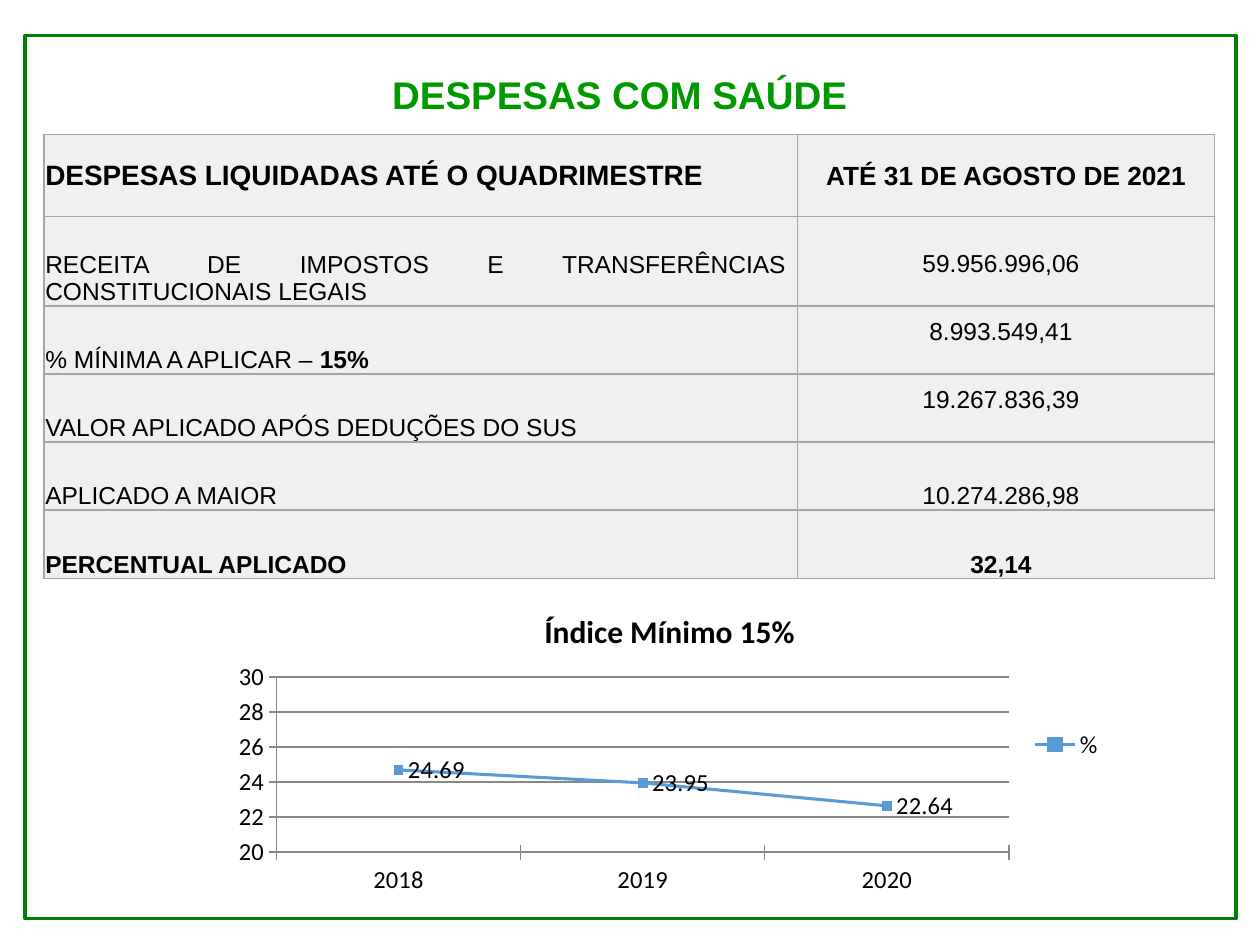
from lxml import etree
from pptx import Presentation
from pptx.chart.data import CategoryChartData
from pptx.dml.color import RGBColor
from pptx.enum.chart import (XL_CHART_TYPE, XL_LABEL_POSITION, XL_LEGEND_POSITION,
                             XL_MARKER_STYLE, XL_TICK_MARK)
from pptx.enum.shapes import MSO_SHAPE
from pptx.enum.text import MSO_ANCHOR, MSO_AUTO_SIZE, PP_ALIGN
from pptx.oxml import parse_xml
from pptx.oxml.ns import nsdecls, qn
from pptx.util import Pt

LEFT, CENTER, JUSTIFY = PP_ALIGN.LEFT, PP_ALIGN.CENTER, PP_ALIGN.JUSTIFY
MIDDLE, BOTTOM = MSO_ANCHOR.MIDDLE, MSO_ANCHOR.BOTTOM
CROSS = XL_TICK_MARK.CROSS

TITLE = "DESPESAS COM SAÚDE"
HEADER = [("DESPESAS LIQUIDADAS ATÉ O QUADRIMESTRE", 16, LEFT),
          ("ATÉ 31 DE AGOSTO DE 2021", 15, CENTER)]
# label runs as (text, bold), value, value bold, value raised by one line
ROWS = [
    ([("RECEITA DE IMPOSTOS E TRANSFERÊNCIAS CONSTITUCIONAIS LEGAIS", False)],
     "59.956.996,06", False, True),
    ([("% MÍNIMA A APLICAR – ", False), ("15%", True)], "8.993.549,41", False, True),
    ([("VALOR APLICADO APÓS DEDUÇÕES DO SUS", False)], "19.267.836,39", False, True),
    ([("APLICADO A MAIOR", False)], "10.274.286,98", False, False),
    ([("PERCENTUAL APLICADO", True)], "32,14", True, False),
]
CHART_TITLE = "Índice Mínimo 15%"
SERIES_NAME = "%"
INDEX_BY_YEAR = {"2018": 24.69, "2019": 23.95, "2020": 22.64}

THEME = {
    "font": "Arial", "chart_font": "Calibri",
    "text": "000000", "title": "009900", "frame": "008000",
    "cell": "F0F0F0", "border": "A5A5A5", "grid": "878787", "series": "5B9BD5",
    "title_size": 22, "body_size": 14, "chart_title_size": 18,
}
FRAME_BOX = (14.4, 20.2, 692, 504.7)
TITLE_BOX = (65.5, 15.1, 584, 55.5)
TABLE_BOX = (25.2, 77, 668.9, 253.4)
CHART_BOX = (127.4, 337.7, 510.5, 175.7)
COLUMN_WIDTHS = (430.6, 238.3)
ROW_HEIGHTS = (46.8, 51.1) + (38.9,) * 4
PLOT_LAYOUT = {"x": 0.06, "y": 0.28, "w": 0.82, "h": 0.57}
LINE_HEIGHT = 16


def box(values):
    return [Pt(v) for v in values]


def color(name):
    return RGBColor.from_string(THEME[name])


def add_run(p, text, size, bold, tint="text", font="font"):
    r = p.add_run()
    r.text = text
    r.font.size, r.font.bold, r.font.name = Pt(size), bold, THEME[font]
    r.font.color.rgb = color(tint)


def style_line(line, tint, width):
    line.color.rgb = color(tint)
    line.width = Pt(width)


def add_frame(s):
    sp = s.shapes.add_shape(MSO_SHAPE.RECTANGLE, *box(FRAME_BOX))
    sp.shadow.inherit = False
    sp.fill.background()
    style_line(sp.line, "frame", 2)


def set_title(s):
    sp = s.shapes.title
    sp.left, sp.top, sp.width, sp.height = box(TITLE_BOX)
    tf = sp.text_frame
    tf.auto_size, tf.vertical_anchor = MSO_AUTO_SIZE.NONE, BOTTOM
    tf.margin_right = Pt(14)
    p = tf.paragraphs[0]
    p.alignment = CENTER
    add_run(p, TITLE, THEME["title_size"], True, "title")


def add_borders(cell):
    tc_pr = cell._tc.get_or_add_tcPr()
    for i, side in enumerate(("lnL", "lnR", "lnT", "lnB")):
        tc_pr.insert(i, parse_xml(
            f'<a:{side} {nsdecls("a")} w="{Pt(1)}"><a:solidFill>'
            f'<a:srgbClr val="{THEME["border"]}"/></a:solidFill></a:{side}>'))


def fill_cell(cell, runs, size, align, anchor, right=6.5, bottom=0):
    cell.fill.solid()
    cell.fill.fore_color.rgb = color("cell")
    add_borders(cell)
    cell.margin_left = cell.margin_top = Pt(0.7)
    cell.margin_right, cell.margin_bottom = Pt(right), Pt(bottom)
    cell.vertical_anchor = anchor
    p = cell.text_frame.paragraphs[0]
    p.alignment = align
    for text, bold in runs:
        add_run(p, text, size, bold)


def add_expense_table(s):
    table = s.shapes.add_table(len(ROW_HEIGHTS), len(COLUMN_WIDTHS), *box(TABLE_BOX)).table
    for column, width in zip(table.columns, COLUMN_WIDTHS):
        column.width = Pt(width)
    for row, height in zip(table.rows, ROW_HEIGHTS):
        row.height = Pt(height)
    for c, (text, size, align) in enumerate(HEADER):
        fill_cell(table.cell(0, c), [(text, True)], size, align, MIDDLE, right=0.7)
    size = THEME["body_size"]
    for i, (label, value, bold, raised) in enumerate(ROWS, start=1):
        fill_cell(table.cell(i, 0), label, size, JUSTIFY, BOTTOM)
        fill_cell(table.cell(i, 1), [(value, bold)], size, CENTER, BOTTOM,
                  bottom=LINE_HEIGHT if raised else 0)


def place_plot(chart):
    """Fix the inner plot area as fractions of the chart."""
    plot_area = chart._chartSpace.chart.plotArea
    for old in plot_area.findall(qn("c:layout")):
        plot_area.remove(old)
    layout = etree.Element(qn("c:layout"))
    manual = etree.SubElement(layout, qn("c:manualLayout"))
    settings = {"layoutTarget": "inner", "xMode": "edge", "yMode": "edge", **PLOT_LAYOUT}
    for tag, value in settings.items():
        etree.SubElement(manual, qn(f"c:{tag}")).set("val", str(value))
    plot_area.insert(0, layout)


def add_index_chart(s):
    data = CategoryChartData()
    data.categories = list(INDEX_BY_YEAR)
    data.add_series(SERIES_NAME, list(INDEX_BY_YEAR.values()))
    chart = s.shapes.add_chart(XL_CHART_TYPE.LINE_MARKERS, *box(CHART_BOX), data).chart
    chart.font.name, chart.font.size = THEME["chart_font"], Pt(THEME["body_size"])
    chart.font.color.rgb = color("text")

    chart.has_title = True
    add_run(chart.chart_title.text_frame.paragraphs[0], CHART_TITLE,
            THEME["chart_title_size"], True, font="chart_font")
    chart.has_legend = True
    chart.legend.position = XL_LEGEND_POSITION.RIGHT
    chart.legend.include_in_layout = False

    values = chart.value_axis
    values.minimum_scale, values.maximum_scale, values.major_unit = 20, 30, 2
    values.has_major_gridlines = True
    style_line(values.major_gridlines.format.line, "grid", 0.75)
    for axis in (values, chart.category_axis):
        axis.major_tick_mark = CROSS
        style_line(axis.format.line, "grid", 0.75)

    plot = chart.plots[0]
    plot.vary_by_categories = False
    plot.has_data_labels = True
    plot.data_labels.show_value = True
    plot.data_labels.position = XL_LABEL_POSITION.RIGHT
    series = plot.series[0]
    series.smooth = False
    style_line(series.format.line, "series", 1.75)
    marker = series.marker
    marker.style, marker.size = XL_MARKER_STYLE.SQUARE, 5
    marker.format.fill.solid()
    marker.format.fill.fore_color.rgb = color("series")
    marker.format.line.color.rgb = color("series")
    place_plot(chart)


def main():
    prs = Presentation()
    prs.slide_width, prs.slide_height = Pt(720), Pt(540)
    s = prs.slides.add_slide(prs.slide_layouts[5])
    add_frame(s)
    set_title(s)
    add_expense_table(s)
    add_index_chart(s)
    prs.save("out.pptx")


if __name__ == "__main__":
    main()
